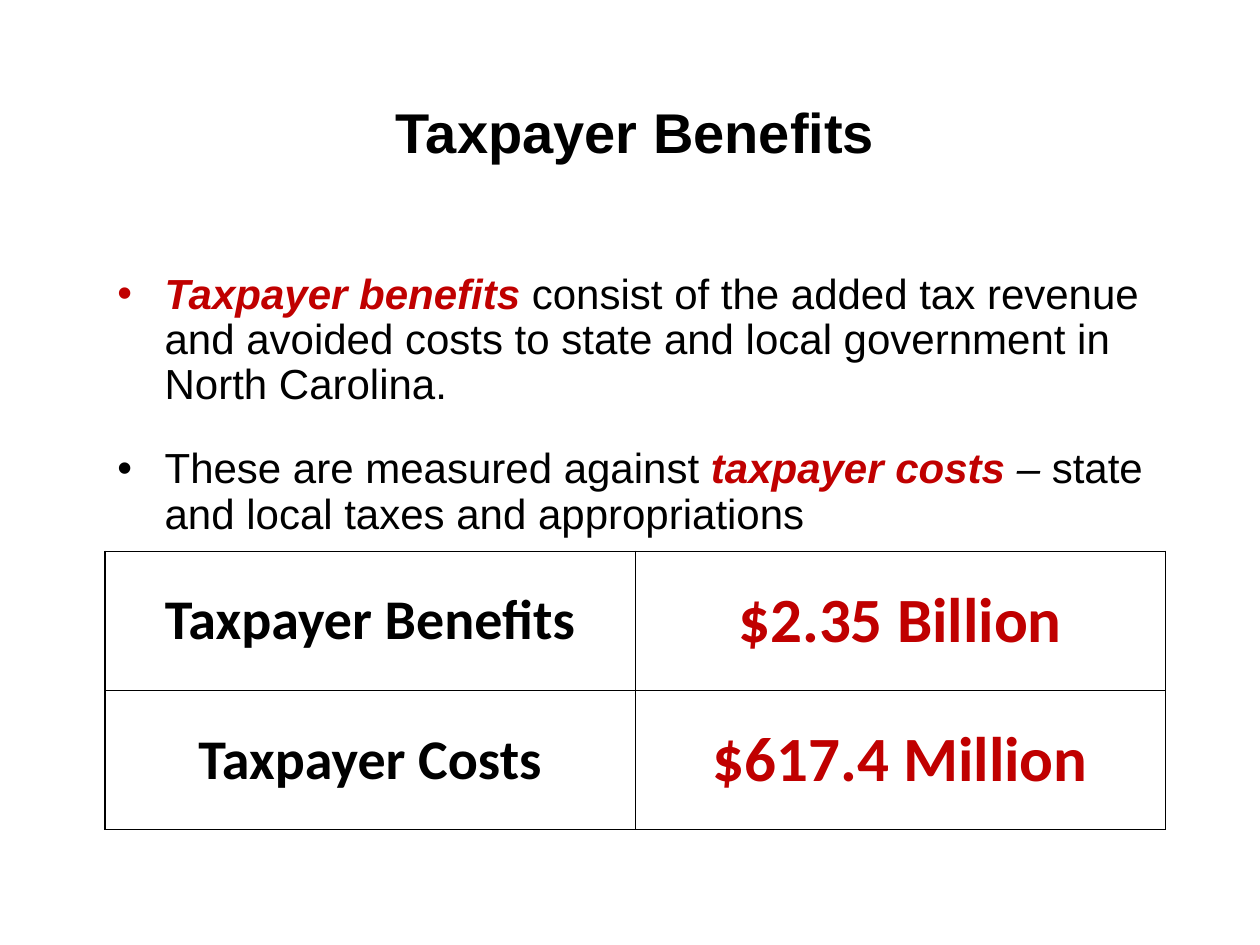
from lxml import etree
from pptx import Presentation
from pptx.dml.color import RGBColor
from pptx.enum.text import MSO_ANCHOR, PP_ALIGN
from pptx.oxml.ns import qn
from pptx.util import Pt

BLACK = RGBColor(0x00, 0x00, 0x00)
RED = RGBColor(0xC0, 0x00, 0x00)
CENTER = PP_ALIGN.CENTER
MIDDLE = MSO_ANCHOR.MIDDLE
TITLE_ONLY = 5

LEFT, WIDTH = 60, 606
INDENT = 27
BORDER_SIDES = ("a:lnL", "a:lnR", "a:lnT", "a:lnB")

HEADING = {"name": "Arial", "size": Pt(32), "bold": True}
PLAIN = {"name": "Arial", "size": Pt(24), "bold": False, "italic": False}
TERM = PLAIN | {"bold": True, "italic": True}
DASH = PLAIN | {"italic": True}
LABEL = {"name": "Calibri", "size": Pt(32), "bold": True}
AMOUNT = LABEL | {"size": Pt(36)}

DEFINITIONS = [
    [("Taxpayer benefits ", TERM, RED),
     ("consist of the added tax revenue and avoided costs to state and local "
      "government in North Carolina.", PLAIN, BLACK)],
    [("These are measured against ", PLAIN, BLACK),
     ("taxpayer costs ", TERM, RED),
     ("– ", DASH, BLACK),
     ("state and local taxes and appropriations", PLAIN, BLACK)],
]
AMOUNTS = [("Taxpayer Benefits", "$2.35 Billion"),
           ("Taxpayer Costs", "$617.4 Million")]


def add_text(paragraph, text, font_format, color):
    """Append a formatted run to the paragraph."""
    run = paragraph.add_run()
    run.text = text
    for attribute, value in font_format.items():
        setattr(run.font, attribute, value)
    run.font.color.rgb = color


def add_bullet(paragraph):
    """Give the paragraph a hanging round bullet."""
    properties = paragraph._p.get_or_add_pPr()
    properties.set("marL", str(Pt(INDENT)))
    properties.set("indent", str(-Pt(INDENT)))
    etree.SubElement(properties, qn("a:buFont"), typeface="Arial")
    etree.SubElement(properties, qn("a:buChar"), char="•")


def add_borders(cell):
    """Draw a thin black line on every side of the cell."""
    properties = cell._tc.get_or_add_tcPr()
    for position, side in enumerate(BORDER_SIDES):
        line = etree.Element(qn(side), w=str(Pt(1)))
        fill = etree.SubElement(line, qn("a:solidFill"))
        etree.SubElement(fill, qn("a:srgbClr"), val=str(BLACK))
        properties.insert(position, line)


def place_title(slide, left, top, width, height):
    """Move and format the slide title."""
    title = slide.shapes.title
    title.left, title.top = Pt(left), Pt(top)
    title.width, title.height = Pt(width), Pt(height)
    title.text_frame.vertical_anchor = MIDDLE
    heading = title.text_frame.paragraphs[0]
    heading.alignment = CENTER
    add_text(heading, "Taxpayer Benefits", HEADING, BLACK)


def place_definitions(slide, left, top, width, height):
    """Place the bulleted definitions in the given box."""
    frame = slide.shapes.add_textbox(
        Pt(left), Pt(top), Pt(width), Pt(height)).text_frame
    frame.word_wrap = True
    frame.margin_top = Pt(6)
    for index, parts in enumerate(DEFINITIONS):
        definition = frame.add_paragraph() if index else frame.paragraphs[0]
        definition.line_spacing = 0.9
        definition.space_before = Pt(22 if index else 0)
        add_bullet(definition)
        for part in parts:
            add_text(definition, *part)


def place_amounts(slide, left, top, width, height):
    """Place the table of benefits and costs in the given box."""
    table = slide.shapes.add_table(
        len(AMOUNTS), 2, Pt(left), Pt(top), Pt(width), Pt(height)).table
    table.first_row = table.horz_banding = False
    for row, texts in enumerate(AMOUNTS):
        styles = ((LABEL, BLACK), (AMOUNT, RED))
        for column, (text, style) in enumerate(zip(texts, styles)):
            cell = table.cell(row, column)
            cell.fill.background()
            cell.vertical_anchor = MIDDLE
            add_borders(cell)
            paragraph = cell.text_frame.paragraphs[0]
            paragraph.alignment = CENTER
            add_text(paragraph, text, *style)


def main():
    """Build and save the slide."""
    presentation = Presentation()
    presentation.slide_width, presentation.slide_height = Pt(720), Pt(540)
    slide = presentation.slides.add_slide(
        presentation.slide_layouts[TITLE_ONLY])
    place_title(slide, LEFT, 30, WIDTH, 90)
    place_definitions(slide, LEFT, 150, WIDTH, 153)
    place_amounts(slide, LEFT, 315, WIDTH, 159)
    presentation.save("out.pptx")


if __name__ == "__main__":
    main()
